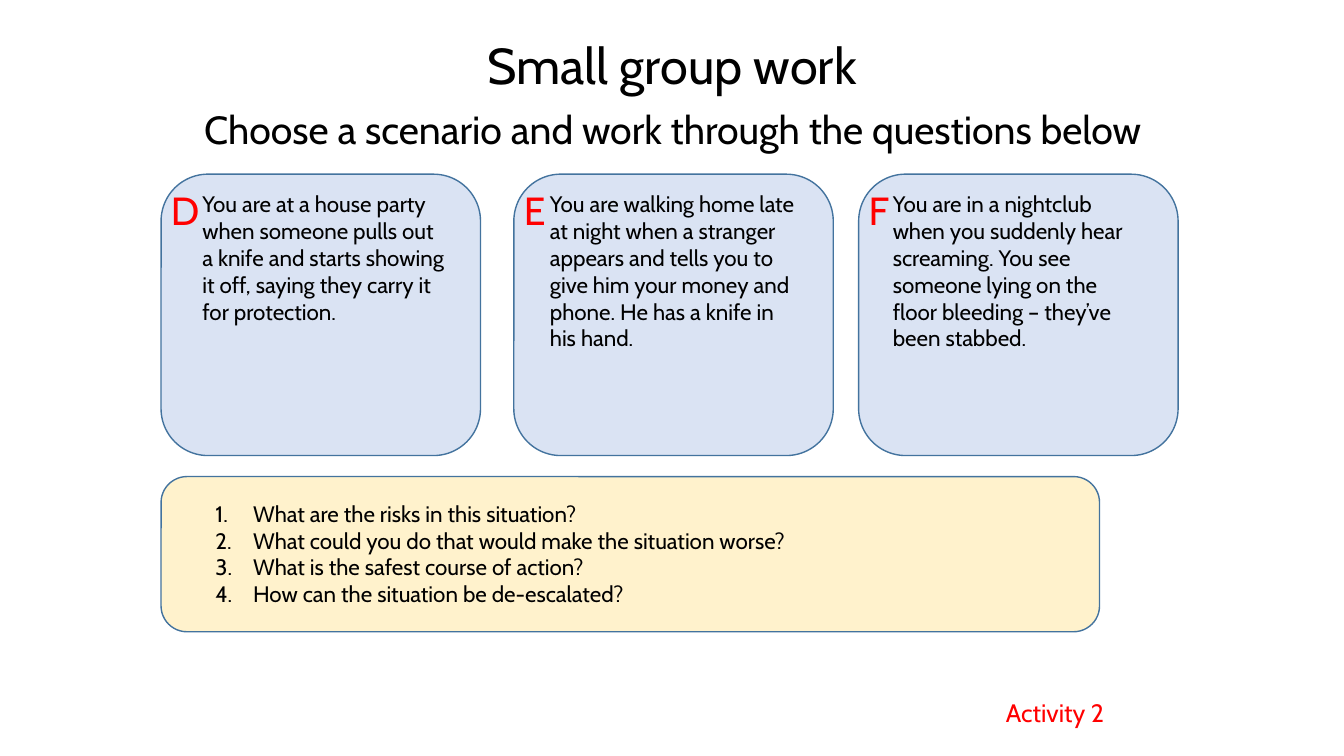
from dataclasses import dataclass

from lxml.etree import SubElement
from pptx import Presentation
from pptx.dml.color import RGBColor
from pptx.enum.shapes import MSO_SHAPE
from pptx.enum.text import MSO_ANCHOR, MSO_AUTO_SIZE, PP_ALIGN
from pptx.oxml.ns import qn
from pptx.slide import Slide
from pptx.text.text import TextFrame
from pptx.util import Cm, Pt

BLACK = RGBColor(0x00, 0x00, 0x00)
RED = RGBColor(0xFF, 0x00, 0x00)
BLUE_FILL = RGBColor(0xDA, 0xE3, 0xF3)
YELLOW_FILL = RGBColor(0xFF, 0xF2, 0xCC)
OUTLINE = RGBColor(0x43, 0x73, 0x9E)
FONT = "Cabin"


@dataclass(frozen=True)
class Box:
    left: float
    top: float
    width: float
    height: float

    def lengths(self) -> tuple[Cm, Cm, Cm, Cm]:
        return Cm(self.left), Cm(self.top), Cm(self.width), Cm(self.height)


@dataclass(frozen=True)
class TextStyle:
    size: int
    color: RGBColor = BLACK
    alignment: PP_ALIGN = PP_ALIGN.LEFT
    numbered: bool = False


@dataclass(frozen=True)
class Scenario:
    letter: str
    left: float
    text_left: float
    text: str


HEADING = TextStyle(36, alignment=PP_ALIGN.CENTER)
SUBHEADING = TextStyle(28, alignment=PP_ALIGN.CENTER)
BODY = TextStyle(16)
NUMBERED_BODY = TextStyle(16, numbered=True)
LETTER = TextStyle(28, RED)
ACTIVITY = TextStyle(18, RED)

SCENARIOS = [
    Scenario("D", 4.06, 4.85, "You are at a house party when someone pulls out a knife "
             "and starts showing it off, saying they carry it for protection."),
    Scenario("E", 12.95, 13.61, "You are walking home late at night when a stranger appears "
             "and tells you to give him your money and phone. He has a knife in his hand."),
    Scenario("F", 21.64, 22.25, "You are in a nightclub when you suddenly hear screaming. "
             "You see someone lying on the floor bleeding – they’ve been stabbed."),
]
QUESTIONS = [
    "What are the risks in this situation?",
    "What could you do that would make the situation worse?",
    "What is the safest course of action?",
    "How can the situation be de-escalated?",
]


def write_text(text_frame: TextFrame, lines: list[str], style: TextStyle) -> None:
    text_frame.word_wrap = True
    text_frame.auto_size = MSO_AUTO_SIZE.NONE
    text_frame.vertical_anchor = MSO_ANCHOR.TOP
    text_frame.text = "\n".join(lines)
    for paragraph in text_frame.paragraphs:
        paragraph.alignment = style.alignment
        if style.numbered:
            properties = paragraph._p.get_or_add_pPr()
            properties.set("marL", str(Cm(0.95)))
            properties.set("indent", str(-Cm(0.95)))
            SubElement(properties, qn("a:buFont"), typeface="+mj-lt")
            SubElement(properties, qn("a:buAutoNum"), type="arabicPeriod")
        paragraph.font.name = FONT
        paragraph.font.size = Pt(style.size)
        paragraph.font.color.rgb = style.color


def add_text(slide: Slide, box: Box, lines: list[str], style: TextStyle) -> None:
    text_box = slide.shapes.add_textbox(*box.lengths())
    write_text(text_box.text_frame, lines, style)


def add_panel(slide: Slide, box: Box, color: RGBColor) -> None:
    panel = slide.shapes.add_shape(MSO_SHAPE.ROUNDED_RECTANGLE, *box.lengths())
    panel.shadow.inherit = False
    panel.fill.solid()
    panel.fill.fore_color.rgb = color
    panel.line.color.rgb = OUTLINE
    panel.line.width = Pt(1)


def add_title(slide: Slide, box: Box, text: str) -> None:
    title = slide.shapes.title
    title.left, title.top, title.width, title.height = box.lengths()
    write_text(title.text_frame, [text], HEADING)


def add_scenario(slide: Slide, scenario: Scenario) -> None:
    add_panel(slide, Box(scenario.left, 4.39, 8.05, 7.09), BLUE_FILL)
    add_text(slide, Box(scenario.text_left, 4.67, 6.73, 4.37), [scenario.text], BODY)
    add_text(slide, Box(scenario.left, 4.57, 2.03, 1.45), [scenario.letter], LETTER)


def main() -> None:
    presentation = Presentation()
    presentation.slide_width = Cm(33.87)
    presentation.slide_height = Cm(19.05)
    slide = presentation.slides.add_slide(presentation.slide_layouts[5])

    add_title(slide, Box(6.38, 0.74, 21.11, 1.8), "Small group work")
    add_text(slide, Box(4.5, 2.54, 24.89, 1.45),
             ["Choose a scenario and work through the questions below"], SUBHEADING)
    for scenario in SCENARIOS:
        add_scenario(slide, scenario)
    add_panel(slide, Box(4.06, 12.01, 23.65, 3.91), YELLOW_FILL)
    add_text(slide, Box(5.18, 12.47, 23.57, 3), QUESTIONS, NUMBERED_BODY)
    add_text(slide, Box(25.1, 17.45, 7.72, 1.02), ["Activity 2"], ACTIVITY)

    presentation.save("out.pptx")


if __name__ == "__main__":
    main()
